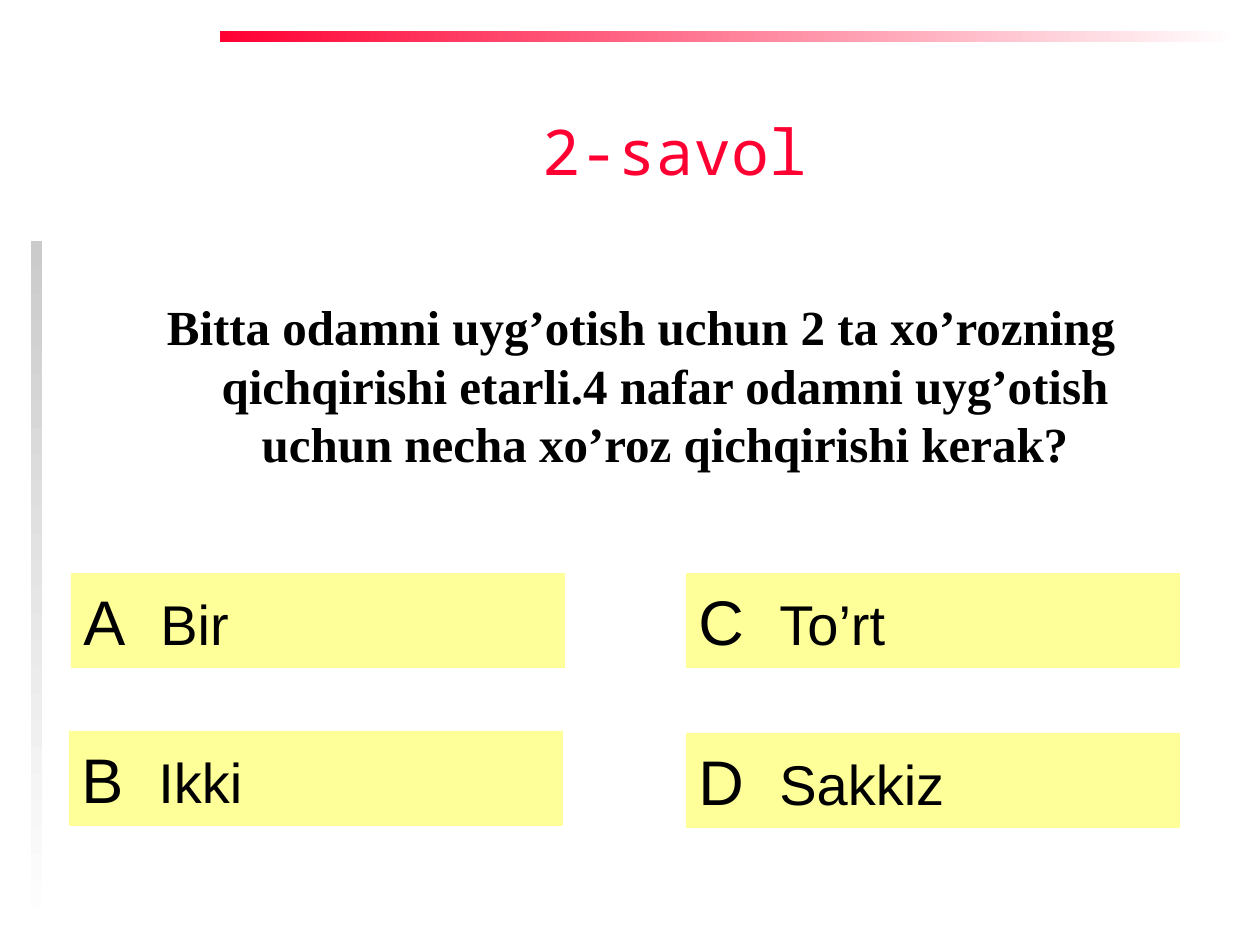
import pptx
import pptx.util
import pptx.dml.color
import pptx.enum.shapes
import pptx.enum.text
import pptx.oxml

PX = 914400 // 126  # EMU per px
COLORS = {"red": "FF0033", "grey": "CBCBCB", "white": "FFFFFF",
          "yellow": "FFFF99", "black": "000000"}
RECT = pptx.enum.shapes.MSO_SHAPE.RECTANGLE
ALIGN = pptx.enum.text.PP_ALIGN
ANCHOR = pptx.enum.text.MSO_ANCHOR


def add_bar(s, box, fill_color, end_color=None, angle=0):
    sp = s.shapes.add_shape(RECT, *[v * PX for v in box])
    sp.shadow.inherit = False
    sp.line.fill.background()
    if end_color is None:
        sp.fill.solid()
        sp.fill.fore_color.rgb = pptx.dml.color.RGBColor.from_string(COLORS[fill_color])
    else:
        sp.fill.gradient()
        sp.fill.gradient_angle = angle
        for stop, name in zip(sp.fill.gradient_stops, (fill_color, end_color)):
            stop.color.rgb = pptx.dml.color.RGBColor.from_string(COLORS[name])
    return sp


def add_run(p, text, color, **formats):
    r = p.add_run()
    r.text = text
    r.font.color.rgb = pptx.dml.color.RGBColor.from_string(COLORS[color])
    for name, value in formats.items():
        setattr(r.font, name, value)


prs = pptx.Presentation()
prs.slide_width, prs.slide_height = pptx.util.Inches(10), pptx.util.Inches(7.5)
s = prs.slides.add_slide(prs.slide_layouts[1])

# Fading bars along the top and left edges
add_bar(s, (220, 31, 1018, 11), "red", "white")
add_bar(s, (31, 241, 11, 693), "grey", "white", 270)

# Title and question
texts = [
    (s.shapes.title, (510, 106, 329, 111), "2-savol", "red",
     {"name": "Noto Sans Mono", "size": pptx.util.Pt(36)}),
    (s.placeholders[1], (135, 290, 1012, 198),
     "Bitta odamni uyg’otish uchun 2 ta xo’rozning qichqirishi etarli."
     "4 nafar odamni uyg’otish uchun necha xo’roz qichqirishi kerak?", "black",
     {"name": "Times New Roman", "size": pptx.util.Pt(28), "bold": True}),
]
for sp, box, text, color, formats in texts:
    sp.left, sp.top, sp.width, sp.height = [v * PX for v in box]
    tf = sp.text_frame
    tf.auto_size = pptx.enum.text.MSO_AUTO_SIZE.NONE
    tf.vertical_anchor = ANCHOR.TOP
    p = tf.paragraphs[0]
    p.alignment = ALIGN.CENTER
    p.space_before = pptx.util.Pt(0)
    add_run(p, text, color, **formats)

# Hanging indent without a bullet for the question
pPr = p._p.get_or_add_pPr()
pPr.set("marL", str(48 * PX))
pPr.set("indent", str(-48 * PX))
pPr.append(pptx.oxml.parse_xml(
    '<a:buNone xmlns:a="http://schemas.openxmlformats.org/drawingml/2006/main"/>'))

# Answer boxes: left, top, letter, answer, tab stop
answers = [
    (71, 573, "А", "Bir", 77),
    (69, 731, "B", "Ikki", 77),
    (686, 573, "C", "To’rt", 81),
    (686, 733, "D", "Sakkiz", 81),
]
for left, top, letter, answer, tab in answers:
    sp = add_bar(s, (left, top, 494, 95), "yellow")
    tf = sp.text_frame
    tf.word_wrap = True
    tf.vertical_anchor = ANCHOR.MIDDLE
    p = tf.paragraphs[0]
    p.alignment = ALIGN.LEFT
    p._p.get_or_add_pPr().append(pptx.oxml.parse_xml(
        '<a:tabLst xmlns:a="http://schemas.openxmlformats.org/drawingml/2006/main">'
        f'<a:tab pos="{tab * PX}" algn="l"/></a:tabLst>'))
    add_run(p, letter + "\t", "black", name="Arial", size=pptx.util.Pt(36))
    add_run(p, answer, "black", name="Arial", size=pptx.util.Pt(32))

prs.save("out.pptx")
